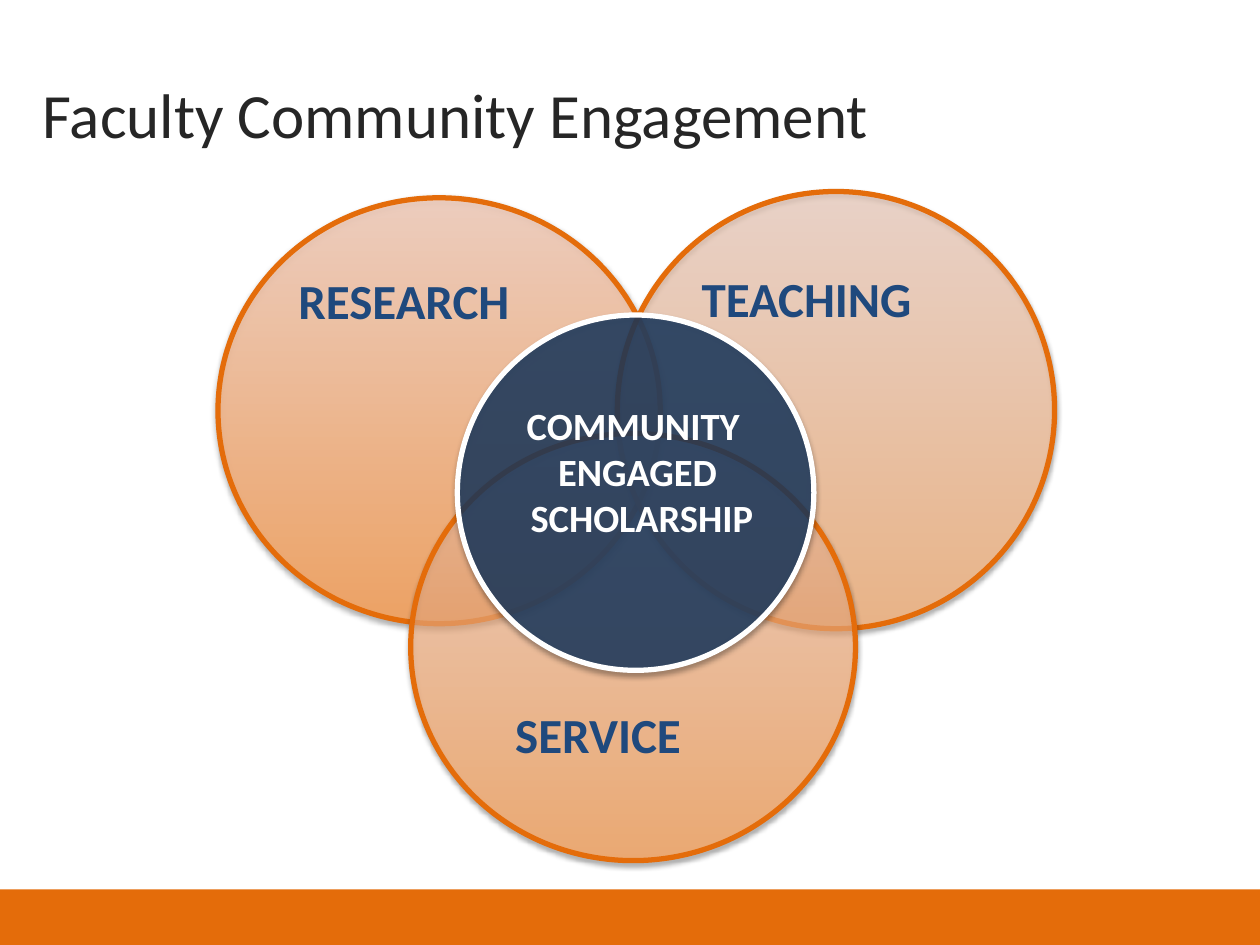
from dataclasses import dataclass

from lxml import etree
from pptx import Presentation
from pptx.dml.color import RGBColor
from pptx.enum.shapes import MSO_SHAPE
from pptx.enum.text import MSO_ANCHOR, PP_ALIGN
from pptx.oxml.ns import qn
from pptx.util import Inches, Pt

RECT, OVAL = MSO_SHAPE.RECTANGLE, MSO_SHAPE.OVAL
TOP, MIDDLE = MSO_ANCHOR.TOP, MSO_ANCHOR.MIDDLE
LEFT, CENTER = PP_ALIGN.LEFT, PP_ALIGN.CENTER


@dataclass(frozen=True)
class Theme:
    font: str = "Calibri"
    orange: str = "E46C0A"
    gradient: tuple = ("FF953E", "FFD2BD")  # bottom to top
    navy: str = "17375E"
    label: str = "1F497D"
    title: str = "262626"
    white: str = "FFFFFF"
    title_size: int = 36
    label_size: int = 28
    center_size: int = 22
    outline: int = 3


THEME = Theme()


def rgb(value):
    return RGBColor.from_string(value)


def add_alpha(color, percent):
    etree.SubElement(color, qn("a:alpha")).set("val", str(percent * 1000))


def add_shadow(sp):
    effects = sp._element.spPr.find(qn("a:effectLst"))
    shadow = etree.SubElement(effects, qn("a:outerShdw"), blurRad=str(Pt(3.1)),
                              dist=str(Pt(1.8)), dir="5400000", rotWithShape="0")
    add_alpha(etree.SubElement(shadow, qn("a:srgbClr"), val="000000"), 35)


def add_shape(s, kind, box):
    sp = s.shapes.add_shape(kind, *map(Inches, box))
    sp.shadow.inherit = False
    return sp


def add_bar(s, box, color):
    sp = add_shape(s, RECT, box)
    sp.fill.solid()
    sp.fill.fore_color.rgb = rgb(color)
    sp.line.fill.background()


def add_circle(s, box, colors, opacity, line):
    """Translucent circle: one colour is solid, two make a vertical gradient."""
    sp = add_shape(s, OVAL, box)
    if len(colors) == 1:
        sp.fill.solid()
        sp.fill.fore_color.rgb = rgb(colors[0])
    else:
        sp.fill.gradient()
        sp.fill.gradient_angle = 90
        for stop, color, position in zip(sp.fill.gradient_stops, colors, (0, 1)):
            stop.color.rgb = rgb(color)
            stop.position = position
    for color in list(sp._element.spPr.iter(qn("a:srgbClr"))):
        add_alpha(color, opacity)
    sp.line.color.rgb = rgb(line)
    sp.line.width = Pt(THEME.outline)
    add_shadow(sp)


def add_text(s, box, text, size, color, bold=True, align=LEFT, anchor=TOP):
    tf = s.shapes.add_textbox(*map(Inches, box)).text_frame
    tf.word_wrap = True
    tf.vertical_anchor = anchor
    tf.text = text
    for p in tf.paragraphs:
        p.alignment = align
        for r in p.runs:
            r.font.name = THEME.font
            r.font.size = Pt(size)
            r.font.bold = bold
            r.font.color.rgb = rgb(color)


def main():
    prs = Presentation()
    prs.slide_width, prs.slide_height = Inches(10), Inches(7.5)
    s = prs.slides.add_slide(prs.slide_layouts[6])

    # Footer bar and title
    add_bar(s, (0, 7.06, 10, 0.44), THEME.orange)
    add_text(s, (0.24, 0.27, 9.32, 1.25), "Faculty Community Engagement",
             THEME.title_size, THEME.title, bold=False, anchor=MIDDLE)

    # Venn circles: research, teaching, service
    for box, opacity in (
        ((1.73, 1.57, 3.51, 3.38), 70),
        ((4.9, 1.52, 3.47, 3.47), 50),
        ((3.26, 3.44, 3.53, 3.39), 61),
    ):
        add_circle(s, box, THEME.gradient, opacity, THEME.orange)

    # Overlap in the centre
    add_circle(s, (3.63, 2.5, 2.83, 2.82), (THEME.navy,), 80, THEME.white)

    # Labels
    for text, box in (
        ("TEACHING", (5.47, 2.08, 2.95, 0.57)),
        ("RESEARCH", (2.27, 2.1, 2.85, 0.57)),
        ("SERVICE", (3.99, 5.54, 2.25, 0.57)),
    ):
        add_text(s, box, text, THEME.label_size, THEME.label)
    add_text(s, (3.18, 3.14, 3.76, 1.21), "COMMUNITY \nENGAGED\n SCHOLARSHIP",
             THEME.center_size, THEME.white, align=CENTER)

    prs.save("out.pptx")


if __name__ == "__main__":
    main()
